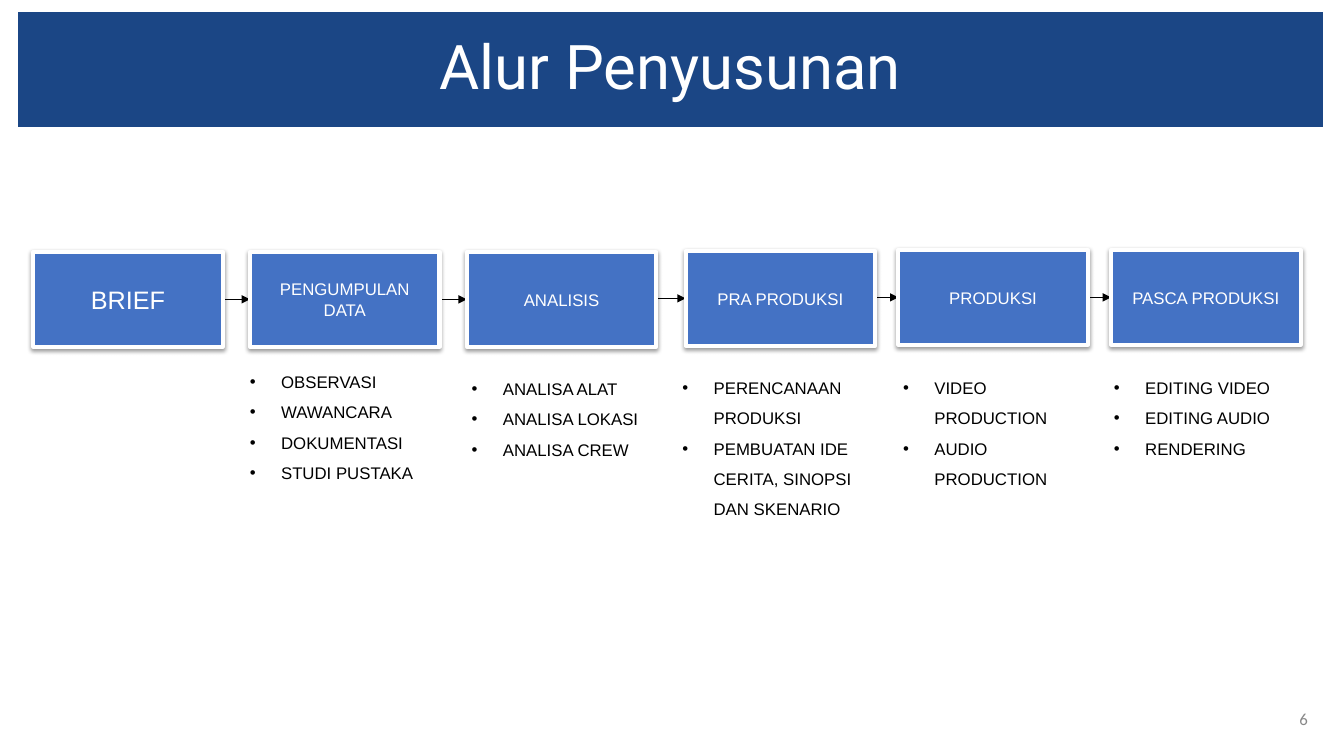
"""Build the "Alur Penyusunan" production workflow slide."""
from dataclasses import dataclass

from lxml import etree
from pptx import Presentation
from pptx.dml.color import RGBColor
from pptx.enum.shapes import MSO_CONNECTOR, MSO_SHAPE
from pptx.enum.text import MSO_ANCHOR, MSO_AUTO_SIZE, PP_ALIGN
from pptx.oxml.ns import qn
from pptx.shapes.autoshape import Shape
from pptx.shapes.connector import Connector
from pptx.slide import Slide
from pptx.text.text import _Paragraph
from pptx.util import Inches, Pt

RECTANGLE = MSO_SHAPE.RECTANGLE
STRAIGHT = MSO_CONNECTOR.STRAIGHT
MIDDLE = MSO_ANCHOR.MIDDLE
CENTER = PP_ALIGN.CENTER
RIGHT = PP_ALIGN.RIGHT
FIT_SHAPE = MSO_AUTO_SIZE.SHAPE_TO_FIT_TEXT

WHITE = "FFFFFF"
BLACK = "000000"
NAVY = "1B4685"
BLUE = "4472C4"
GREY = "888888"

STAGE_WIDTH = 1.88
STAGE_HEIGHT = 0.94
LIST_WIDTH = 1.9
LIST_INDENT = 0.31
LIST_LINE_HEIGHT = 0.3
ARROW_LENGTH = 0.48
LEFT_SIDE = 1


@dataclass(frozen=True)
class Stage:
    title: str
    left: float
    top: float
    size: int = 12


@dataclass(frozen=True)
class ActivityList:
    left: float
    top: float
    line_count: int
    items: tuple[str, ...]


STAGES = (
    Stage("BRIEF", 0.33, 2.5, 18),
    Stage("PENGUMPULAN DATA", 2.48, 2.5),
    Stage("ANALISIS", 4.63, 2.5),
    Stage("PRA PRODUKSI", 6.8, 2.49),
    Stage("PRODUKSI", 8.91, 2.48),
    Stage("PASCA PRODUKSI", 11.02, 2.48),
)
ACTIVITY_LISTS = (
    ActivityList(2.38, 3.54, 4, ("OBSERVASI", "WAWANCARA", "DOKUMENTASI", "STUDI PUSTAKA")),
    ActivityList(4.58, 3.61, 3, ("ANALISA ALAT", "ANALISA LOKASI", "ANALISA CREW")),
    ActivityList(6.67, 3.6, 5, ("PERENCANAAN PRODUKSI", "PEMBUATAN IDE CERITA, SINOPSI DAN SKENARIO")),
    ActivityList(8.86, 3.6, 4, ("VIDEO PRODUCTION", "AUDIO PRODUCTION")),
    ActivityList(10.95, 3.6, 3, ("EDITING VIDEO", "EDITING AUDIO", "RENDERING")),
)


def color(value: str) -> RGBColor:
    return RGBColor.from_string(value)


def add_run(paragraph: _Paragraph, text: str, size: int, font_color: str, font_name: str = "Arial") -> None:
    run = paragraph.add_run()
    run.text = text
    run.font.size = Pt(size)
    run.font.name = font_name
    run.font.color.rgb = color(font_color)


def add_rectangle(slide: Slide, left: float, top: float, width: float, height: float, fill: str) -> Shape:
    shape = slide.shapes.add_shape(RECTANGLE, Inches(left), Inches(top), Inches(width), Inches(height))
    shape.fill.solid()
    shape.fill.fore_color.rgb = color(fill)
    shape.line.fill.background()
    shape.shadow.inherit = False
    shape.text_frame.word_wrap = True
    shape.text_frame.vertical_anchor = MIDDLE
    shape.text_frame.paragraphs[0].alignment = CENTER
    return shape


def add_title(slide: Slide) -> None:
    banner = add_rectangle(slide, 0.18, 0.12, 12.94, 1.14, NAVY)
    paragraph = banner.text_frame.paragraphs[0]
    paragraph.line_spacing = 0.9
    add_run(paragraph, "Alur Penyusunan", 44, WHITE, "Roboto")


def add_page_number(slide: Slide) -> None:
    text_box = slide.shapes.add_textbox(Inches(12.5), Inches(6.93), Inches(0.57), Inches(0.4))
    text_box.text_frame.word_wrap = True
    text_box.text_frame.vertical_anchor = MIDDLE
    paragraph = text_box.text_frame.paragraphs[0]
    paragraph.alignment = RIGHT
    add_run(paragraph, "6", 12, GREY, "Calibri")


def add_arrow(slide: Slide, target: Stage) -> Connector:
    middle = Inches(target.top + STAGE_HEIGHT / 2)
    arrow = slide.shapes.add_connector(
        STRAIGHT, Inches(target.left - ARROW_LENGTH), middle, Inches(target.left), middle
    )
    arrow.line.color.rgb = color(BLACK)
    arrow.line.width = Pt(0.75)
    properties = arrow._element.spPr
    etree.SubElement(properties.find(qn("a:ln")), qn("a:tailEnd"), type="triangle")
    etree.SubElement(properties, qn("a:effectLst"))
    return arrow


def add_shadow(shape: Shape) -> None:
    effects = shape._element.spPr.find(qn("a:effectLst"))
    shadow = etree.SubElement(
        effects, qn("a:outerShdw"), blurRad=str(Pt(3.1)), dist=str(Pt(1.6)), dir="5400000", rotWithShape="0"
    )
    shadow_color = etree.SubElement(shadow, qn("a:srgbClr"), val=BLACK)
    etree.SubElement(shadow_color, qn("a:alpha"), val="38000")


def add_stage(slide: Slide, stage: Stage) -> Shape:
    shape = add_rectangle(slide, stage.left, stage.top, STAGE_WIDTH, STAGE_HEIGHT, BLUE)
    shape.line.color.rgb = color(WHITE)
    shape.line.width = Pt(3)
    add_shadow(shape)
    add_run(shape.text_frame.paragraphs[0], stage.title, stage.size, WHITE)
    return shape


def add_bullet(paragraph: _Paragraph) -> None:
    properties = paragraph._p.get_or_add_pPr()
    properties.set("marL", str(Inches(LIST_INDENT)))
    properties.set("indent", str(-Inches(LIST_INDENT)))
    bullet_color = etree.SubElement(properties, qn("a:buClr"))
    etree.SubElement(bullet_color, qn("a:srgbClr"), val=BLACK)
    etree.SubElement(properties, qn("a:buFont"), typeface="Arial")
    etree.SubElement(properties, qn("a:buChar"), char="•")


def add_activity_list(slide: Slide, activities: ActivityList) -> None:
    height = activities.line_count * LIST_LINE_HEIGHT + 0.07
    text_box = slide.shapes.add_textbox(
        Inches(activities.left), Inches(activities.top), Inches(LIST_WIDTH), Inches(height)
    )
    frame = text_box.text_frame
    frame.word_wrap = True
    frame.auto_size = FIT_SHAPE
    for index, item in enumerate(activities.items):
        paragraph = frame.add_paragraph() if index else frame.paragraphs[0]
        add_bullet(paragraph)
        paragraph.line_spacing = 1.5
        add_run(paragraph, item, 12, BLACK)


def main() -> None:
    presentation = Presentation()
    presentation.slide_width = Inches(13.33)
    presentation.slide_height = Inches(7.5)
    slide = presentation.slides.add_slide(presentation.slide_layouts[6])
    add_page_number(slide)
    add_title(slide)
    arrows = [add_arrow(slide, stage) for stage in STAGES[1:]]
    for activities in ACTIVITY_LISTS:
        add_activity_list(slide, activities)
    stage_shapes = [add_stage(slide, stage) for stage in STAGES]
    for arrow, target in zip(arrows, stage_shapes[1:]):
        arrow.end_connect(target, LEFT_SIDE)
    presentation.save("out.pptx")


if __name__ == "__main__":
    main()
